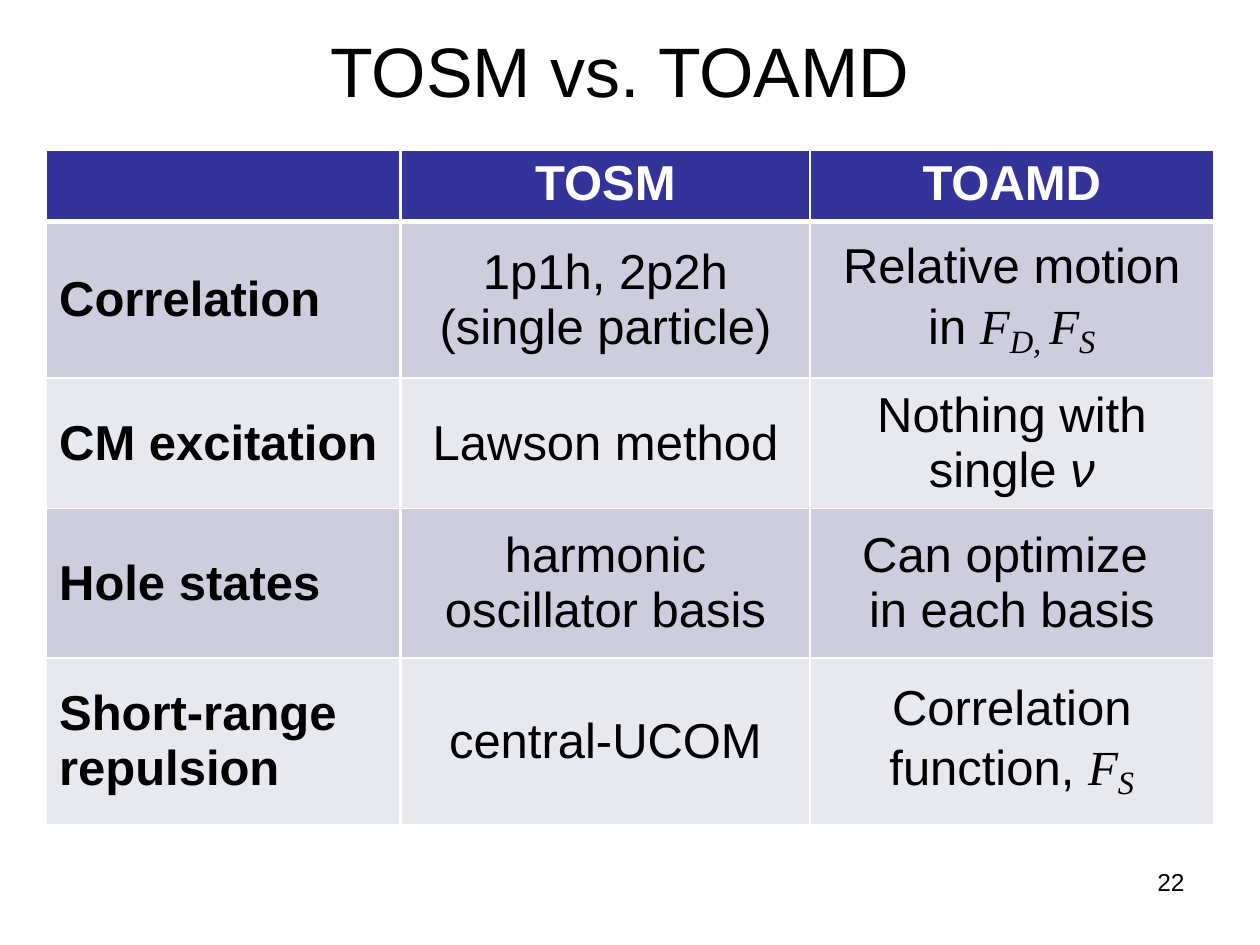
from lxml import etree
from pptx import Presentation
from pptx.dml.color import RGBColor
from pptx.enum.text import MSO_ANCHOR, PP_ALIGN
from pptx.oxml.ns import qn
from pptx.util import Inches, Pt

LEFT, CENTER, RIGHT = PP_ALIGN.LEFT, PP_ALIGN.CENTER, PP_ALIGN.RIGHT
TOP, MIDDLE = MSO_ANCHOR.TOP, MSO_ANCHOR.MIDDLE

SANS, SERIF = "Arial", "Times New Roman"
BLACK, WHITE = "000000", "FFFFFF"
HEADER_FILL = "333399"
BAND_FILLS = ("CDCDDE", "E8E8EF")

COLUMN_WIDTHS = (2.81, 3.25, 3.2)
ROW_HEIGHTS = (0.57, 1.24, 0.81, 1.19, 1.32)

# Run styles for symbols: (font, size, subscript)
SYMBOL = (SERIF, 28, False)
SUBSCRIPT = (SERIF, 32, True)
GREEK = (SANS, 28, False)

# A cell is a list of paragraphs; a paragraph is a list of runs (text, style)
ROWS = [
    [[], [[("TOSM", None)]], [[("TOAMD", None)]]],
    [[[("Correlation", None)]],
     [[("1p1h, 2p2h", None)], [("(single particle)", None)]],
     [[("Relative motion in ", None), ("F", SYMBOL), ("D, ", SUBSCRIPT),
       ("F", SYMBOL), ("S", SUBSCRIPT)]]],
    [[[("CM excitation", None)]],
     [[("Lawson method", None)]],
     [[("Nothing with single ", None), ("ν", GREEK)]]],
    [[[("Hole states", None)]],
     [[("harmonic oscillator basis", None)]],
     [[("Can optimize ", None)], [("in each basis", None)]]],
    [[[("Short-range repulsion", None)]],
     [[("central-UCOM", None)]],
     [[("Correlation function, ", None), ("F", SYMBOL), ("S", SUBSCRIPT)]]],
]


def rgb(color):
    return RGBColor.from_string(color)


def set_font(font, size, color=BLACK, name=SANS, bold=False):
    font.name = name
    font.size = Pt(size)
    font.bold = bold
    font.color.rgb = rgb(color)


def add_line(slide, box, text, size, align, anchor):
    """Place one line of text in the given box."""
    frame = slide.shapes.add_textbox(*map(Inches, box)).text_frame
    frame.word_wrap = True
    frame.vertical_anchor = anchor
    paragraph = frame.paragraphs[0]
    paragraph.text = text
    paragraph.alignment = align
    set_font(paragraph.font, size)


def set_borders(cell, widths):
    """Draw white borders; widths are points for left, right, top, bottom."""
    properties = cell._tc.get_or_add_tcPr()
    for index, (side, width) in enumerate(zip("LRTB", widths)):
        line = etree.Element(qn(f"a:ln{side}"), w=str(Pt(width)))
        fill = etree.SubElement(line, qn("a:solidFill"))
        etree.SubElement(fill, qn("a:srgbClr"), val=WHITE)
        properties.insert(index, line)


def fill_text(cell, paragraphs, align, color, bold):
    frame = cell.text_frame
    for index, runs in enumerate(paragraphs):
        paragraph = frame.add_paragraph() if index else frame.paragraphs[0]
        paragraph.alignment = align
        mixed = len(runs) > 1
        if not mixed:
            set_font(paragraph.font, 28, color, bold=bold)
        for text, style in runs:
            run = paragraph.add_run()
            run.text = text
            if mixed:
                name, size, subscript = style or GREEK
                set_font(run.font, size, color, name, bold)
                run.font.italic = style is not None
                if subscript:
                    run.font._element.set("baseline", "-16000")


def add_comparison(slide, box):
    """Place the table that compares the two methods."""
    table = slide.shapes.add_table(
        len(ROWS), len(COLUMN_WIDTHS), *map(Inches, box)).table
    for column, width in zip(table.columns, COLUMN_WIDTHS):
        column.width = Inches(width)
    for r, (row, height) in enumerate(zip(ROWS, ROW_HEIGHTS)):
        table.rows[r].height = Inches(height)
        header = r == 0
        for c, paragraphs in enumerate(row):
            cell = table.cell(r, c)
            cell.vertical_anchor = TOP if header else MIDDLE
            cell.fill.solid()
            cell.fill.fore_color.rgb = rgb(
                HEADER_FILL if header else BAND_FILLS[(r - 1) % 2])
            set_borders(cell, (2.25 if c == 1 else 1,
                               2.25 if c == 0 else 1,
                               3 if r == 1 else 1,
                               3 if header else 1))
            fill_text(cell, paragraphs,
                      LEFT if c == 0 else CENTER,
                      WHITE if header else BLACK,
                      bold=header or c == 0)


def main():
    presentation = Presentation()
    presentation.slide_width = Inches(10)
    presentation.slide_height = Inches(7.5)
    slide = presentation.slides.add_slide(presentation.slide_layouts[6])

    # Title
    add_line(slide, (0.42, 0.21, 9, 0.69), "TOSM vs. TOAMD", 40, CENTER, MIDDLE)
    # Comparison table
    add_comparison(slide, (0.37, 1.19, sum(COLUMN_WIDTHS), sum(ROW_HEIGHTS)))
    # Page number
    add_line(slide, (7.17, 6.83, 2.33, 0.52), "22", 14, RIGHT, TOP)

    presentation.save("out.pptx")


if __name__ == "__main__":
    main()
